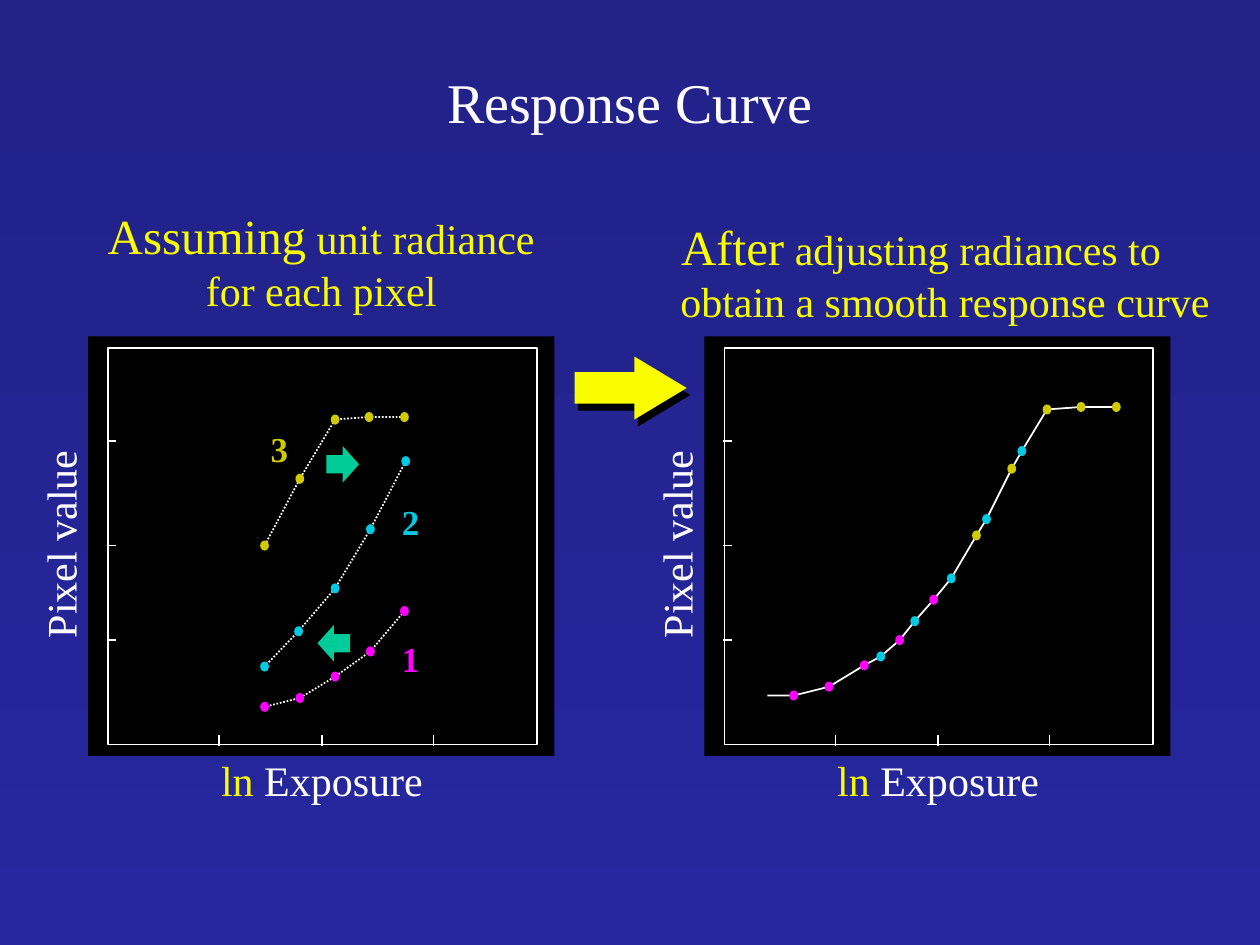
import pptx
import pptx.util
import pptx.dml.color
import pptx.enum.dml
import pptx.enum.shapes
import pptx.enum.text
import pptx.oxml

RGBColor = pptx.dml.color.RGBColor
SHAPES = pptx.enum.shapes.MSO_SHAPE
ALIGN = pptx.enum.text.PP_ALIGN
DASH = pptx.enum.dml.MSO_LINE

WHITE = RGBColor(0xFF, 0xFF, 0xFF)
BLACK = RGBColor(0x00, 0x00, 0x00)
YELLOW = RGBColor(0xFA, 0xFD, 0x00)
OLIVE = RGBColor(0xCF, 0xCA, 0x02)
CYAN = RGBColor(0x00, 0xCA, 0xE3)
MAGENTA = RGBColor(0xFF, 0x00, 0xFF)
GREEN = RGBColor(0x00, 0xCC, 0x99)
NAVY_TOP = RGBColor(0x21, 0x21, 0x88)
NAVY_BOTTOM = RGBColor(0x27, 0x27, 0x9F)

COLUMNS, ROWS = 100, 75
CELL = pptx.util.Inches(0.1)
PANEL_LEFTS = (7, 55.9)
HANGING = 3.8
DOT_WIDTH, DOT_HEIGHT = 0.7, 0.8

EXPOSURES = [
    (OLIVE, (56.5, -0.8), [(32.1, 33.1), (29.3, 33.1), (26.6, 33.3), (23.8, 38), (21, 43.3)]),
    (CYAN, (48.9, -0.8), [(32.2, 36.6), (29.4, 42), (26.6, 46.7), (23.7, 50.1), (21, 52.9)]),
    (MAGENTA, (42, -0.9), [(32.1, 48.5), (29.4, 51.7), (26.6, 53.7), (23.8, 55.4), (21, 56.1)]),
]
CURVE_TAIL = (60.9, 55.2)


def grid(*cells):
    return [round(cell * CELL) for cell in cells]


def effects(shadow_distance=0):
    shadow = ""
    if shadow_distance:
        distance = pptx.util.Pt(shadow_distance)
        shadow = (f'<a:outerShdw dist="{distance}" dir="3780000" algn="ctr" rotWithShape="0">'
                  f'<a:srgbClr val="{BLACK}"/></a:outerShdw>')
    return pptx.oxml.parse_xml(
        '<a:effectLst xmlns:a="http://schemas.openxmlformats.org/drawingml/2006/main">'
        f'{shadow}</a:effectLst>')


def add_text(slide, box, paragraphs, align=ALIGN.CENTER, bold=False, hanging=0, rotation=0):
    area = slide.shapes.add_textbox(*grid(*box))
    area.rotation = rotation
    frame = area.text_frame
    frame.word_wrap = True
    for index, pieces in enumerate(paragraphs):
        paragraph = frame.add_paragraph() if index else frame.paragraphs[0]
        paragraph.alignment = align
        if hanging:
            properties = paragraph._p.get_or_add_pPr()
            indent = grid(hanging)[0]
            properties.set("marL", str(indent))
            properties.set("indent", str(-indent))
        for wording, size, color in pieces:
            run = paragraph.add_run()
            run.text = wording
            run.font.size = pptx.util.Pt(size)
            run.font.bold = bold
            run.font.color.rgb = color
            run._r.get_or_add_rPr().append(effects(2))
            run.font.name = "Times New Roman"


def add_solid(slide, kind, box, color):
    solid = slide.shapes.add_shape(kind, *grid(*box))
    solid.shadow.inherit = False
    solid.fill.solid()
    solid.fill.fore_color.rgb = color
    solid.line.fill.background()
    return solid


def outline(shape, dash=None):
    shape.line.color.rgb = WHITE
    shape.line.width = pptx.util.Pt(1)
    if dash:
        shape.line.dash_style = dash


def add_tick(slide, start, end):
    tick = slide.shapes.add_connector(
        pptx.enum.shapes.MSO_CONNECTOR.STRAIGHT, *grid(*start, *end))
    outline(tick)
    tick._element.spPr.append(effects())


def add_curve(slide, points, dash=None):
    corners = [grid(*point) for point in points]
    builder = slide.shapes.build_freeform(*corners[0])
    builder.add_line_segments(corners[1:], close=False)
    curve = builder.convert_to_shape()
    curve.shadow.inherit = False
    curve.fill.background()
    outline(curve, dash)


def add_dots(slide, points, color):
    for x, y in points:
        box = (x - DOT_WIDTH / 2, y - DOT_HEIGHT / 2, DOT_WIDTH, DOT_HEIGHT)
        add_solid(slide, SHAPES.OVAL, box, color)


def add_panel(slide, left):
    add_solid(slide, SHAPES.RECTANGLE, (left, 26.7, 37, 33.3), BLACK)
    axes = slide.shapes.add_shape(SHAPES.RECTANGLE, *grid(left + 1.6, 27.6, 34, 31.5))
    axes.shadow.inherit = False
    axes.fill.background()
    outline(axes)
    for y in (35, 43.3, 50.8):
        add_tick(slide, (left + 1.5, y), (left + 2.2, y))
    for offset in (10.4, 18.55, 27.4):
        add_tick(slide, (left + offset, 58.3), (left + offset, 59.2))
    add_text(slide, (left, 59.4, 37.1, 5), [[("ln", 24, YELLOW), (" Exposure", 24, WHITE)]])
    add_text(slide, (left - 19.1, 40.8, 33.5, 4.8), [[("Pixel value", 24, WHITE)]], rotation=270)


def add_separate_curves(slide):
    for color, _, points in EXPOSURES:
        add_curve(slide, points, DASH.ROUND_DOT)
        add_dots(slide, points, color)
    add_solid(slide, SHAPES.RIGHT_ARROW, (25.9, 35.4, 2.6, 2.9), GREEN)
    add_solid(slide, SHAPES.LEFT_ARROW, (25.2, 49.6, 2.6, 2.9), GREEN)
    for number, left, top, color in (
            ("3", 20.5, 33.4, OLIVE), ("2", 30.9, 39.2, CYAN), ("1", 30.9, 50.1, MAGENTA)):
        add_text(slide, (left, top, 5.5, 4.3), [[(number, 20, color)]],
                 align=ALIGN.LEFT, bold=True)


def add_joined_curve(slide):
    shifted = [(color, [(x + dx, y + dy) for x, y in points])
               for color, (dx, dy), points in EXPOSURES]
    joined = [point for _, points in shifted for point in points]
    add_curve(slide, sorted(joined + [CURVE_TAIL], reverse=True))
    for color, points in shifted:
        add_dots(slide, points, color)


def paint_background(slide):
    backdrop = slide.background.fill
    backdrop.gradient()
    backdrop.gradient_angle = 270
    for stop, color in zip(backdrop.gradient_stops, (NAVY_TOP, NAVY_BOTTOM)):
        stop.color.rgb = color


def main():
    deck = pptx.Presentation()
    deck.slide_width, deck.slide_height = grid(COLUMNS, ROWS)
    slide = deck.slides.add_slide(deck.slide_layouts[6])
    paint_background(slide)
    add_text(slide, (15.2, 4.9, 69.6, 6.7), [[("Response Curve", 32, WHITE)]], hanging=HANGING)
    add_text(slide, (7, 15.8, 37, 10),
             [[("Assuming", 28, YELLOW), (" unit radiance", 24, YELLOW)],
              [("for each pixel", 24, YELLOW)]], hanging=HANGING)
    add_text(slide, (49.2, 16.7, 47.8, 9.2),
             [[("After", 28, YELLOW),
               (" adjusting radiances to obtain a smooth response curve", 24, YELLOW)]],
             hanging=HANGING)
    for left in PANEL_LEFTS:
        add_panel(slide, left)
    add_separate_curves(slide)
    add_joined_curve(slide)
    step = add_solid(slide, SHAPES.RIGHT_ARROW, (45.6, 28.3, 8.9, 5), YELLOW)
    step.adjustments[1] = 0.83
    properties = step._element.spPr
    properties.remove(properties[-1])
    properties.append(effects(4.5))
    deck.save("out.pptx")


if __name__ == "__main__":
    main()
